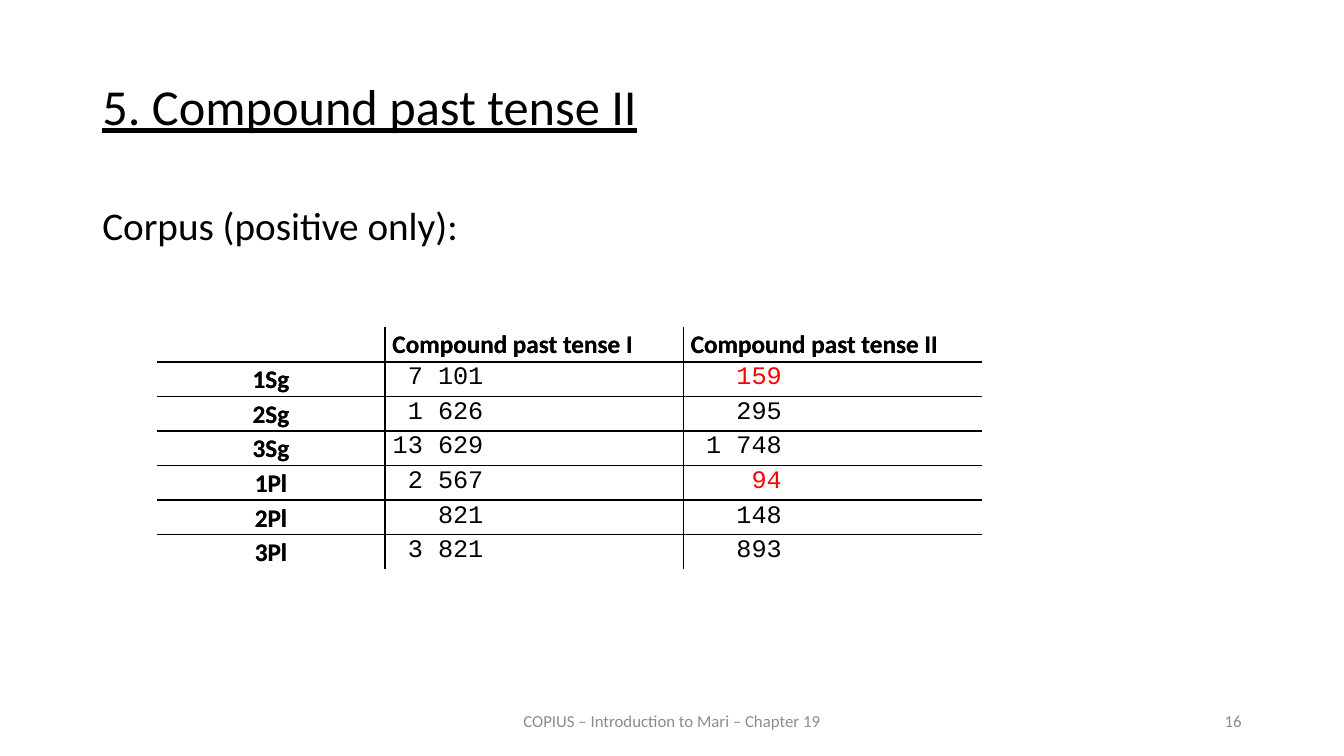
from lxml.etree import SubElement
from pptx import Presentation
from pptx.dml.color import RGBColor
from pptx.enum.text import MSO_ANCHOR as Anchor, PP_ALIGN as Align
from pptx.oxml.ns import qn
from pptx.util import Cm, Pt

BLACK, RED, GREY = "000000", "FF0000", "8C8C8C"
HEADERS = ["", "Compound past tense I", "Compound past tense II"]
COUNTS = [
    ("1Sg", "7 101", "159"),
    ("2Sg", "1 626", "295"),
    ("3Sg", "13 629", "1 748"),
    ("1Pl", "2 567", "94"),
    ("2Pl", "821", "148"),
    ("3Pl", "3 821", "893"),
]
FRAME = [(person, "", "") for person, *_ in COUNTS]
RARE = {"159", "94"}
LABEL_W, COUNT_W, ROW_H = 5.74, 7.52, 0.87
SIDE, COUNT_RIGHT = 0.19, 5.04

HEADER = dict(align=Align.JUSTIFY, anchor=Anchor.TOP, right=SIDE, font=dict(bold=True))
PERSON = dict(align=Align.CENTER, anchor=Anchor.MIDDLE, right=SIDE, font=dict(bold=True))
COUNT = dict(align=Align.RIGHT, anchor=Anchor.TOP, right=COUNT_RIGHT,
             font=dict(name="Courier New", bold=False))


def set_color(target, value):
    target.rgb = RGBColor.from_string(value)


def write(tf, text, size, color=BLACK, font=None, **para):
    """Put one formatted paragraph into a text frame."""
    p = tf.paragraphs[0]
    for key, value in para.items():
        setattr(p, key, value)
    r = p.add_run()
    r.text = text
    for key, value in {"name": "Calibri", "size": Pt(size), **(font or {})}.items():
        setattr(r.font, key, value)
    set_color(r.font.color, color)


def add_text(s, box, text, size, anchor=Anchor.TOP, **style):
    sp = s.shapes.add_textbox(*(Cm(v) for v in box))
    tf = sp.text_frame
    tf.word_wrap = True
    tf.vertical_anchor = anchor
    write(tf, text, size, **style)


def set_borders(cell, visible):
    """Draw the visible sides (letters of LRTB) and clear the others."""
    tc_pr = cell._tc.get_or_add_tcPr()
    for side in "LRTB":
        ln = SubElement(tc_pr, qn(f"a:ln{side}"), w=str(Pt(1)))
        if side in visible:
            fill = SubElement(ln, qn("a:solidFill"))
            SubElement(fill, qn("a:srgbClr"), val=BLACK)
        else:
            SubElement(ln, qn("a:noFill"))


def fill_cell(cell, text, style, visible):
    set_borders(cell, visible)
    cell.fill.background()
    margins = dict(margin_left=Cm(SIDE), margin_right=Cm(style["right"]),
                   margin_top=0, margin_bottom=0, vertical_anchor=style["anchor"])
    for key, value in margins.items():
        setattr(cell, key, value)
    if text:
        write(cell.text_frame, text, 18, RED if text in RARE else BLACK,
              style["font"], alignment=style["align"], line_spacing=1.07)


def add_corpus_table(s, body):
    rows = [HEADERS, *body]
    widths = [LABEL_W, COUNT_W, COUNT_W]
    table = s.shapes.add_table(len(rows), len(widths), Cm(3.96), Cm(8.25),
                               Cm(sum(widths)), Cm(ROW_H * len(rows))).table
    table.first_row = table.horz_banding = False
    for column, width in zip(table.columns, widths):
        column.width = Cm(width)
    for i, row in enumerate(rows):
        table.rows[i].height = Cm(ROW_H)
        for j, text in enumerate(row):
            # Only the inner grid lines are drawn
            inner = {"L": j > 0, "R": j < len(widths) - 1,
                     "T": i > 0, "B": i < len(rows) - 1}
            style = HEADER if i == 0 else COUNT if j else PERSON
            fill_cell(table.cell(i, j), text, style, [k for k in inner if inner[k]])


def main():
    prs = Presentation()
    prs.slide_width, prs.slide_height = Cm(33.87), Cm(19.05)
    s = prs.slides.add_slide(prs.slide_layouts[6])

    # Table frame with headings, which thickens the bold text above it
    add_corpus_table(s, FRAME)

    # Lead-in
    add_text(s, (2.33, 5.07, 29.21, 12.09), "Corpus (positive only):", 28,
             line_spacing=0.9, space_before=Pt(10))

    # Footer and page number
    add_text(s, (11.22, 17.66, 11.43, 1.01), "COPIUS – Introduction to Mari – Chapter 19",
             12, Anchor.MIDDLE, color=GREY, alignment=Align.CENTER)
    add_text(s, (23.92, 17.66, 7.62, 1.01), "16",
             12, Anchor.MIDDLE, color=GREY, alignment=Align.RIGHT)

    # Corpus counts
    add_corpus_table(s, COUNTS)

    # Title
    add_text(s, (2.33, 1.93, 29.21, 2.1), "5. Compound past tense II", 36,
             font=dict(underline=True), alignment=Align.JUSTIFY,
             line_spacing=0.9, space_before=Pt(12))

    prs.save("out.pptx")


if __name__ == "__main__":
    main()
